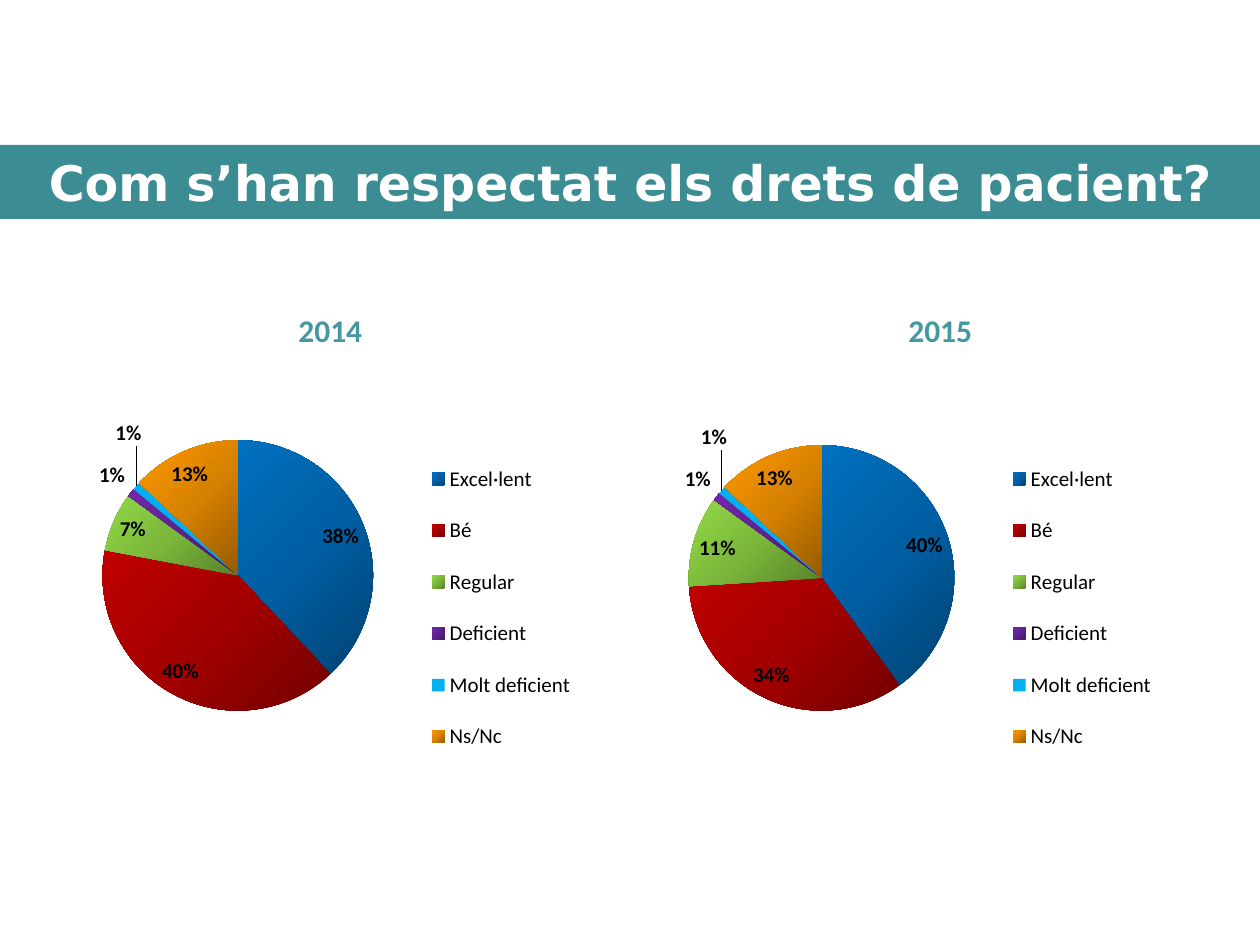
from copy import deepcopy
from pptx import Presentation
from pptx import util as u
from pptx.chart.data import CategoryChartData
from pptx.dml.color import RGBColor
from pptx.enum import chart as ch, text
from pptx.oxml import parse_xml
from pptx.oxml.ns import nsdecls

SCALE = 914400 / 126
TEAL = RGBColor(0x3C, 0x8C, 0x93)
AQUA = RGBColor(0x45, 0x97, 0xA0)
WHITE = RGBColor(0xFF, 0xFF, 0xFF)
BLACK = RGBColor(0x00, 0x00, 0x00)
SKY = RGBColor(0x00, 0xB0, 0xF0)
BLUE = [RGBColor(0x00, 0x42, 0x72), RGBColor(0x00, 0x5E, 0xA2), RGBColor(0x00, 0x70, 0xC0)]
RED = [RGBColor(0x72, 0x00, 0x00), RGBColor(0xA2, 0x00, 0x00), RGBColor(0xC0, 0x00, 0x00)]
GREEN = [RGBColor(0x57, 0x81, 0x2A), RGBColor(0x7B, 0xB7, 0x3B), RGBColor(0x92, 0xDA, 0x46)]
PLUM = [RGBColor(0x43, 0x17, 0x64), RGBColor(0x5F, 0x21, 0x8E), RGBColor(0x71, 0x28, 0xA8)]
GOLD = [RGBColor(0x97, 0x5B, 0x00), RGBColor(0xD7, 0x81, 0x00), RGBColor(0xFF, 0x99, 0x00)]
SLICES = [BLUE, RED, GREEN, PLUM, SKY, GOLD]
CATS = ["Excel·lent", "Bé", "Regular", "Deficient", "Molt deficient", "Ns/Nc"]
MOVED = 4  # slice whose label is pulled away on a leader line


def px(n):
    return u.Emu(round(n * SCALE))


def style(font, color, **values):
    for name, value in values.items():
        setattr(font, name, value)
    font.color.rgb = color


def layout(x, y, w=None, h=None, inner=False):
    """Manual chart layout in fractions; without a size, an offset."""
    parts = [("layoutTarget", "inner")] if inner else []
    if w:
        parts += [("xMode", "edge"), ("yMode", "edge")]
    parts += [("x", x), ("y", y)]
    if w:
        parts += [("w", w), ("h", h)]
    body = "".join(f'<c:{tag} val="{val}"/>' for tag, val in parts)
    return parse_xml(f"<c:layout {nsdecls('c')}><c:manualLayout>{body}"
                     "</c:manualLayout></c:layout>")


def place(parent, new, after=None):
    """Put a layout into its parent, first or after the named child."""
    for old in parent.xpath("./c:layout"):
        parent.remove(old)
    if after:
        parent.xpath(f"./c:{after}")[0].addnext(new)
    else:
        parent.insert(0, new)


def paint(root, fill, color):
    """Fill a slice with one colour or a diagonal blend of three."""
    if isinstance(color, RGBColor):
        fill.solid()
        fill.fore_color.rgb = color
        return
    fill.gradient()
    fill.gradient_angle = 135
    stops = root.xpath(".//a:gsLst")[-1]
    stops.insert(1, deepcopy(stops[0]))
    for stop, tint, pos in zip(fill.gradient_stops, color, (0, 0.5, 1)):
        stop.color.rgb = tint
        stop.position = pos


def add_title(slide, words):
    title = slide.shapes.title
    title.left, title.top, title.width, title.height = map(px, (0, 145, 1260, 74))
    title.fill.solid()
    title.fill.fore_color.rgb = TEAL
    frame = title.text_frame
    frame.text = words
    frame.auto_size = text.MSO_AUTO_SIZE.NONE
    frame.vertical_anchor = text.MSO_ANCHOR.MIDDLE
    para = frame.paragraphs[0]
    para.alignment = text.PP_ALIGN.CENTER
    style(para.runs[0].font, WHITE, name="DejaVu Sans", size=u.Pt(28), bold=True)


def add_year(slide, year, left, width):
    frame = slide.shapes.add_textbox(*map(px, (left, 305, width, 50))).text_frame
    frame.word_wrap = True
    frame.auto_size = text.MSO_AUTO_SIZE.SHAPE_TO_FIT_TEXT
    run = frame.paragraphs[0].add_run()
    run.text = year
    style(run.font, AQUA, name="Calibri", size=u.Pt(18), bold=True)


def add_pie(slide, left, values, area):
    data = CategoryChartData()
    data.categories = CATS
    data.add_series("Series 1", values)
    chart = slide.shapes.add_chart(
        ch.XL_CHART_TYPE.PIE, *map(px, (left, 335, 532, 501)), data).chart
    style(chart.font, BLACK, name="Arial", size=u.Pt(18))
    chart.has_title = False
    root = chart._chartSpace
    place(root.xpath(".//c:plotArea")[0], layout(*area, inner=True))

    # Legend
    chart.has_legend = True
    key = chart.legend
    key.position = ch.XL_LEGEND_POSITION.RIGHT
    key.include_in_layout = False
    style(key.font, BLACK, name="Calibri", size=u.Pt(12))
    place(root.xpath(".//c:legend")[0], layout(0.7, 0.21, 0.3, 0.67), "legendPos")

    # Slices
    plot = chart.plots[0]
    plot.vary_by_categories = True
    pie = plot.series[0]
    for i, color in enumerate(SLICES):
        paint(root, pie.points[i].format.fill, color)

    # Percent labels
    face = dict(name="Calibri", size=u.Pt(12), bold=True)
    labels = pie.data_labels
    values = dict(show_percentage=True, show_value=False, number_format="0%",
                  number_format_is_linked=False,
                  position=ch.XL_LABEL_POSITION.BEST_FIT)
    for name, value in values.items():
        setattr(labels, name, value)
    style(labels.font, BLACK, **face)
    tag = pie.points[MOVED].data_label
    style(tag.font, BLACK, **face)
    tag.position = ch.XL_LABEL_POSITION.BEST_FIT
    node = root.xpath(".//c:dLbl")[0]
    place(node, layout(0.02, -0.07), "idx")
    for name, on in (("showVal", "0"), ("showPercent", "1")):
        node.xpath(f"./c:{name}")[0].set("val", on)


def main():
    deck = Presentation()
    deck.slide_width, deck.slide_height = px(1260), px(945)
    slide = deck.slides.add_slide(deck.slide_layouts[5])
    add_title(slide, "Com s’han respectat els drets de pacient?")
    add_pie(slide, 49, (38, 40, 7, 1, 1, 13), (0.1, 0.21, 0.51, 0.54))
    add_pie(slide, 630, (40, 34, 11, 1, 1, 13), (0.11, 0.22, 0.5, 0.53))
    add_year(slide, "2014", 286, 108)
    add_year(slide, "2015", 896, 98)
    deck.save("out.pptx")


if __name__ == "__main__":
    main()
